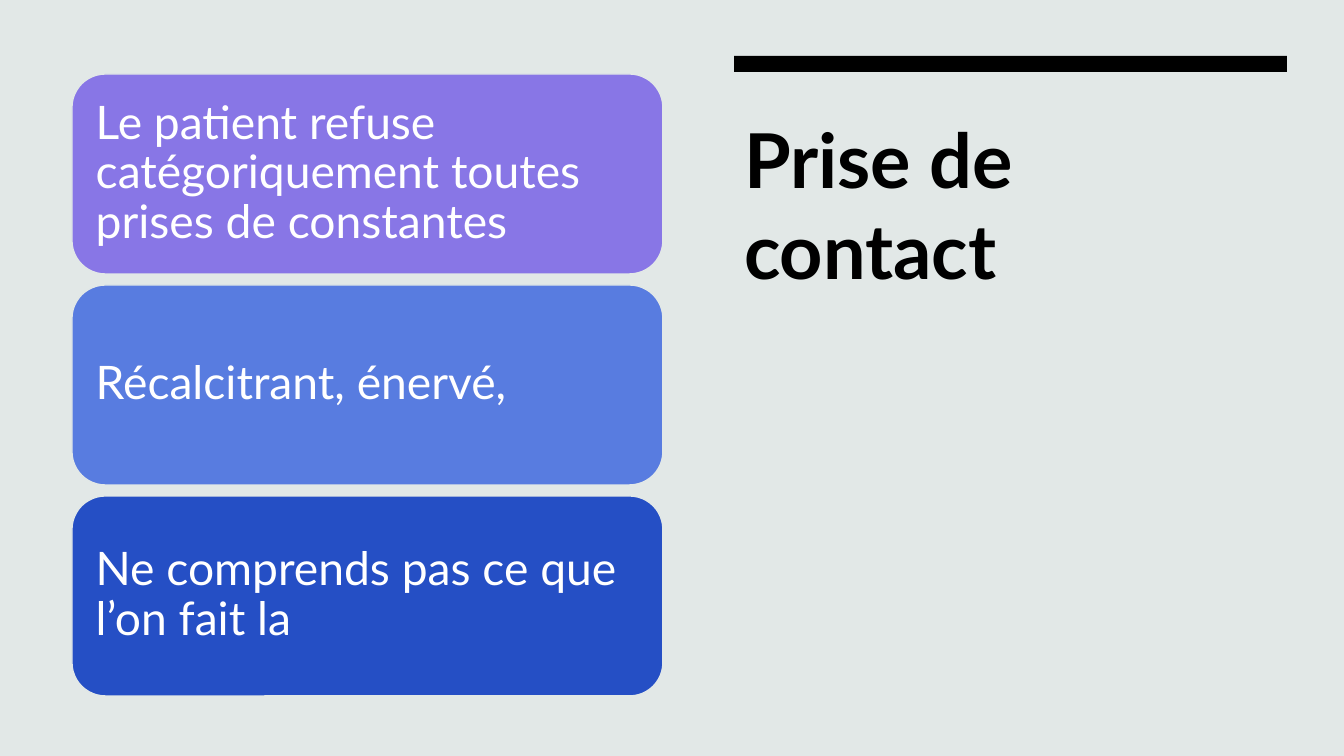
from pptx import Presentation
from pptx.dml.color import RGBColor as RGB
from pptx.enum.shapes import MSO_SHAPE as SHAPE
from pptx.enum.text import MSO_ANCHOR as ANCHOR, MSO_AUTO_SIZE as FIT, PP_ALIGN as ALIGN
from pptx.util import Pt

PX = 914400 / 100.8  # EMU per px


class Theme:
    font = "Lato"
    background = RGB.from_string("E2E8E7")
    ink = RGB.from_string("000000")
    card_text = RGB.from_string("FFFFFF")
    cards = [RGB.from_string(c) for c in ("8876E6", "587CE0", "254FC5")]
    title_size = 54
    card_size = 33


def px(*lengths):
    return [round(length * PX) for length in lengths]


def write(shape, text, size, color, bold=False, anchor=ANCHOR.TOP,
          inset=(10, 5), spacing=1.0):
    frame = shape.text_frame
    frame.word_wrap = True
    frame.auto_size = FIT.NONE
    frame.vertical_anchor = anchor
    frame.margin_left, frame.margin_top = px(*inset)
    frame.margin_right, frame.margin_bottom = px(*inset)
    paragraph = frame.paragraphs[0]
    paragraph.alignment = ALIGN.LEFT
    paragraph.line_spacing = spacing
    run = paragraph.add_run()
    run.text = text
    run.font.name = Theme.font
    run.font.size = Pt(size)
    run.font.bold = bold
    run.font.color.rgb = color


deck = Presentation()
deck.slide_width, deck.slide_height = px(1344, 756)
slide = deck.slides.add_slide(deck.slide_layouts[5])
slide.background.fill.solid()
slide.background.fill.fore_color.rgb = Theme.background

# Title
title = slide.shapes.title
title.left, title.top, title.width, title.height = px(734, 108, 553, 220)
write(title, "Prise de contact", Theme.title_size, Theme.ink, bold=True)

# Bar above the title
bar = slide.shapes.add_shape(SHAPE.RECTANGLE, *px(734, 56, 553, 16))
bar.shadow.inherit = False
bar.fill.solid()
bar.fill.fore_color.rgb = Theme.ink
bar.line.fill.background()

# Observation cards
observations = [
    "Le patient refuse catégoriquement toutes prises de constantes",
    "Récalcitrant, énervé,",
    "Ne comprends pas ce que l’on fait la",
]
CARD_TOP, CARD_PITCH = 74, 211
for row, (observation, color) in enumerate(zip(observations, Theme.cards)):
    card = slide.shapes.add_shape(
        SHAPE.ROUNDED_RECTANGLE, *px(72, CARD_TOP + row * CARD_PITCH, 591, 200))
    card.shadow.inherit = False
    card.fill.solid()
    card.fill.fore_color.rgb = color
    card.line.color.rgb = Theme.background
    card.line.width = Pt(1)
    write(card, observation, Theme.card_size, Theme.card_text,
          anchor=ANCHOR.MIDDLE, inset=(14, 14), spacing=0.9)

deck.save("out.pptx")
